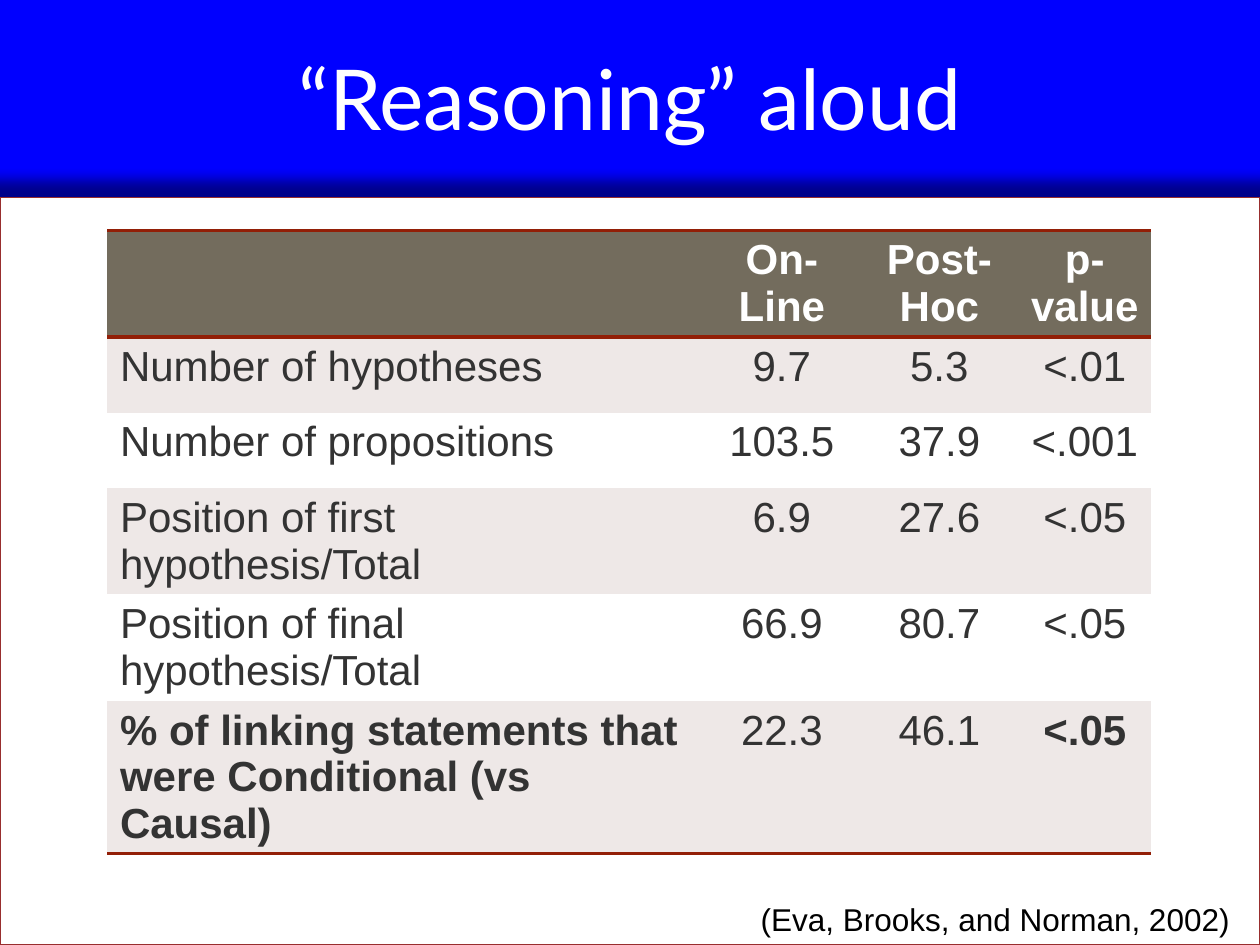
from pptx import Presentation
from pptx.dml.color import RGBColor
from pptx.enum.shapes import MSO_SHAPE
from pptx.enum.text import MSO_ANCHOR, PP_ALIGN
from pptx.oxml import parse_xml
from pptx.oxml.ns import nsdecls, qn
from pptx.util import Pt

LEFT, CENTER, RIGHT = PP_ALIGN.LEFT, PP_ALIGN.CENTER, PP_ALIGN.RIGHT
MIDDLE = MSO_ANCHOR.MIDDLE
RECTANGLE = MSO_SHAPE.RECTANGLE

SLIDE_WIDTH, SLIDE_HEIGHT = 720, 540
PANEL_TOP = 112.8
CONTENT_LEFT = 61.4
BLUE, WHITE, BLACK = "0000FF", "FFFFFF", "000000"
PANEL_EDGE, RULE = "982E2E", "921F07"
HEADER_FILL, BAND_FILL, BODY_TEXT = "736C5D", "EEE8E7", "333333"
NO_STYLE_NO_GRID = "{2D5ABB26-0587-4C30-8999-92F81FD0307C}"

COLUMN_WIDTHS = [340.4, 90, 90, 76.2]
ROW_HEIGHT = 43.2
RESULTS = [
    ["", "On-Line", "Post-Hoc", "p-value"],
    ["Number of hypotheses", "9.7", "5.3", "<.01"],
    ["Number of propositions", "103.5", "37.9", "<.001"],
    ["Position of first hypothesis/Total", "6.9", "27.6", "<.05"],
    ["Position of final hypothesis/Total", "66.9", "80.7", "<.05"],
    ["% of linking statements that were Conditional (vs Causal)",
     "22.3", "46.1", "<.05"],
]
LAST_ROW, LAST_COLUMN = len(RESULTS) - 1, len(COLUMN_WIDTHS) - 1


def color(hex_string):
    return RGBColor.from_string(hex_string)


def write(frame, text, size, font, hex_color, align, bold=False):
    paragraph = frame.paragraphs[0]
    paragraph.alignment = align
    run = paragraph.add_run()
    run.text = text
    run.font.size = Pt(size)
    run.font.name = font
    run.font.bold = bold
    run.font.color.rgb = color(hex_color)


def add_panel(slide):
    panel = slide.shapes.add_shape(
        RECTANGLE, 0, Pt(PANEL_TOP), Pt(SLIDE_WIDTH), Pt(SLIDE_HEIGHT - PANEL_TOP))
    panel.fill.solid()
    panel.fill.fore_color.rgb = color(WHITE)
    panel.line.color.rgb = color(PANEL_EDGE)
    panel.line.width = Pt(1)
    # Soft shadow cast upwards onto the title band, wider than the panel
    panel.shadow.inherit = False
    effects = panel._element.spPr.find(qn("a:effectLst"))
    effects.append(parse_xml(
        f'<a:outerShdw {nsdecls("a")} blurRad="{Pt(8)}" dist="{Pt(9)}" '
        f'dir="16200000" sx="105000" algn="b" rotWithShape="0">'
        f'<a:srgbClr val="{BLACK}"><a:alpha val="45000"/></a:srgbClr>'
        '</a:outerShdw>'))


def set_title(slide, text):
    title = slide.shapes.title
    title.left, title.top = Pt(CONTENT_LEFT), Pt(5)
    title.width, title.height = Pt(597.4), Pt(101)
    title.text_frame.vertical_anchor = MIDDLE
    write(title.text_frame, text, 48, "Lato", WHITE, CENTER)


def add_rule(cell, side):
    cell._tc.get_or_add_tcPr().append(parse_xml(
        f'<a:{side} {nsdecls("a")} w="{Pt(2)}"><a:solidFill>'
        f'<a:srgbClr val="{RULE}"/></a:solidFill></a:{side}>'))


def format_cell(cell, text, row, column):
    is_header = row == 0
    # Rules above and below the header, and under the last row
    if is_header:
        add_rule(cell, "lnT")
    if row in (0, LAST_ROW):
        add_rule(cell, "lnB")
    band = BAND_FILL if row % 2 else WHITE
    cell.fill.solid()
    cell.fill.fore_color.rgb = color(HEADER_FILL if is_header else band)
    if text:
        bold = is_header or (row == LAST_ROW and column in (0, LAST_COLUMN))
        write(cell.text_frame, text, 24, "Arial",
              WHITE if is_header else BODY_TEXT,
              CENTER if column else LEFT, bold)


def add_results_table(slide):
    table = slide.shapes.add_table(
        len(RESULTS), len(COLUMN_WIDTHS), Pt(CONTENT_LEFT), Pt(131.8),
        Pt(sum(COLUMN_WIDTHS)), Pt(ROW_HEIGHT * len(RESULTS))).table
    table._tbl.tblPr.find(qn("a:tableStyleId")).text = NO_STYLE_NO_GRID
    for column, width in zip(table.columns, COLUMN_WIDTHS):
        column.width = Pt(width)
    for row, texts in enumerate(RESULTS):
        for column, text in enumerate(texts):
            format_cell(table.cell(row, column), text, row, column)


def add_citation(slide, text):
    citation = slide.shapes.add_textbox(Pt(244), Pt(511), Pt(476), Pt(29))
    frame = citation.text_frame
    frame.word_wrap = True
    frame.margin_right = Pt(17.2)
    write(frame, text, 18, "Arial", BLACK, RIGHT)


def main():
    presentation = Presentation()
    presentation.slide_width = Pt(SLIDE_WIDTH)
    presentation.slide_height = Pt(SLIDE_HEIGHT)
    slide = presentation.slides.add_slide(presentation.slide_layouts[5])
    slide.background.fill.solid()
    slide.background.fill.fore_color.rgb = color(BLUE)

    add_panel(slide)
    set_title(slide, "“Reasoning” aloud")
    add_results_table(slide)
    add_citation(slide, "(Eva, Brooks, and Norman, 2002)")
    presentation.save("out.pptx")


if __name__ == "__main__":
    main()
